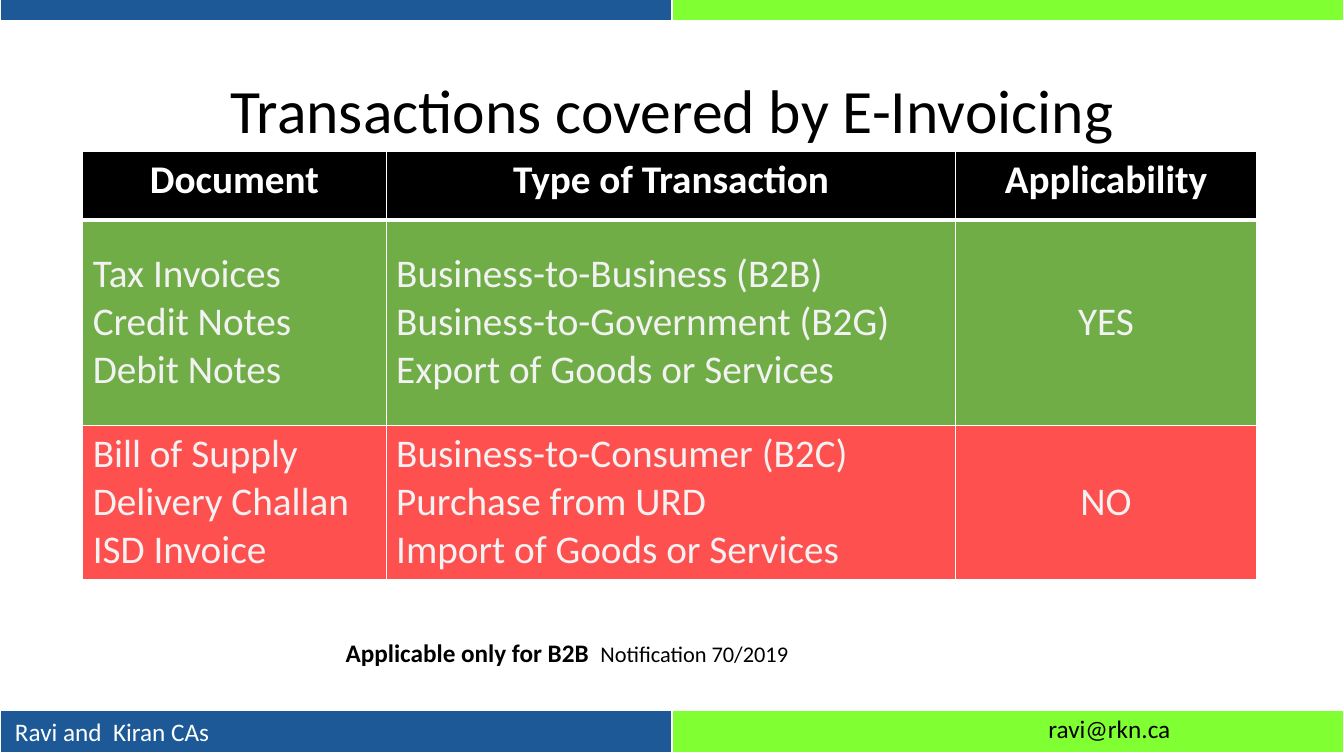
from lxml.etree import SubElement
from pptx import Presentation
from pptx.dml.color import RGBColor
from pptx.enum.text import MSO_ANCHOR as Anchor, PP_ALIGN as Align
from pptx.oxml.ns import qn
from pptx.util import Inches, Pt

FONT = "Calibri"
COLORS = {
    "white": "FFFFFF",
    "black": "000000",
    "pale": "F2F2F2",
    "blue": "1D5996",
    "lime": "80FF33",
    "green": "70AD47",
    "red": "FF5050",
}
HEADERS = ["Document", "Type of Transaction", "Applicability"]
TRANSACTION_ROWS = [
    ("green", [
        ["Tax Invoices", "Credit Notes", "Debit Notes"],
        ["Business-to-Business (B2B)", "Business-to-Government (B2G)",
         "Export of Goods or Services"],
        ["YES"],
    ]),
    ("red", [
        ["Bill of Supply", "Delivery Challan", "ISD Invoice"],
        ["Business-to-Consumer (B2C)", "Purchase from URD",
         "Import of Goods or Services"],
        ["NO"],
    ]),
]


def color(name):
    return RGBColor.from_string(COLORS[name])


def add_run(paragraph, text, size, color_name, bold=False):
    run = paragraph.add_run()
    run.text = text
    run.font.name = FONT
    run.font.size = Pt(size)
    run.font.bold = bold
    run.font.color.rgb = color(color_name)


def add_text(slide, box, runs, wrap=True):
    shape = slide.shapes.add_textbox(*map(Inches, box))
    frame = shape.text_frame
    frame.word_wrap = wrap
    paragraph = frame.paragraphs[0]
    for run in runs:
        add_run(paragraph, *run)
    return frame


def style_cell(cell, fill_name, bottom_width):
    cell.fill.solid()
    cell.fill.fore_color.rgb = color(fill_name)
    properties = cell._tc.get_or_add_tcPr()
    for index, side in enumerate("LRTB"):
        width = bottom_width if side == "B" else 1
        line = SubElement(properties, qn(f"a:ln{side}"), w=str(Pt(width)))
        fill = SubElement(line, qn("a:solidFill"))
        SubElement(fill, qn("a:srgbClr"), val=COLORS["white"])
        properties.insert(index, line)


def add_grid(slide, left, top, widths, heights):
    box = map(Inches, (left, top, sum(widths), sum(heights)))
    table = slide.shapes.add_table(len(heights), len(widths), *box).table
    table.horz_banding = False
    for column, width in zip(table.columns, widths):
        column.width = Inches(width)
    for row, height in zip(table.rows, heights):
        row.height = Inches(height)
    return table


def add_band(slide, left, top, width, height):
    table = add_grid(slide, left, top, [width / 2] * 2, [height])
    for cell, fill_name in zip(table.rows[0].cells, ("blue", "lime")):
        style_cell(cell, fill_name, 3)


def add_footer(slide, left, top, width, height):
    add_band(slide, left, top, width, height)
    add_text(slide, (left + 0.05, top + 0.01, 2.29, 0.4),
             [("Ravi and  Kiran CAs", 18, "white")], wrap=False)
    add_text(slide, (left + 10.3, top - 0.02, 1.56, 0.4),
             [("ravi@rkn.ca", 18, "black")], wrap=False)


def add_title(slide, left, top, width, height):
    frame = add_text(slide, (left, top, width, height),
                     [("Transactions covered by E-Invoicing", 44, "black")])
    frame.vertical_anchor = Anchor.MIDDLE
    frame.paragraphs[0].alignment = Align.CENTER
    frame.paragraphs[0].line_spacing = 0.9


def fill_cell(cell, lines, text_color, bold, alignment):
    frame = cell.text_frame
    for index, line in enumerate(lines):
        paragraph = frame.add_paragraph() if index else frame.paragraphs[0]
        paragraph.alignment = alignment
        add_run(paragraph, line, 28, text_color, bold)


def add_transactions(slide, left, top):
    table = add_grid(slide, left, top, [3.01, 5.65, 2.98], [0.68, 2.04, 1.53])
    for cell, header in zip(table.rows[0].cells, HEADERS):
        style_cell(cell, "black", 3)
        fill_cell(cell, [header], "white", True, Align.CENTER)
    for row_index, (fill_name, entries) in enumerate(TRANSACTION_ROWS, 1):
        for cell, lines in zip(table.rows[row_index].cells, entries):
            style_cell(cell, fill_name, 1)
            cell.vertical_anchor = Anchor.MIDDLE
            alignment = Align.CENTER if len(lines) == 1 else Align.LEFT
            fill_cell(cell, lines, "pale", False, alignment)


def add_note(slide, left, top, width, height):
    add_text(slide, (left, top, width, height), [
        ("Applicable only for B2B  ", 18, "black", True),
        ("Notification 70/2019", 16, "black"),
    ])


def main():
    presentation = Presentation()
    presentation.slide_width = Inches(13.33)
    presentation.slide_height = Inches(7.5)
    slide = presentation.slides.add_slide(presentation.slide_layouts[6])
    add_footer(slide, 0, 7.05, 13.33, 0.43)
    add_band(slide, 0, -0.21, 13.33, 0.43)
    add_title(slide, 0.92, 0.4, 11.5, 1.45)
    add_transactions(slide, 0.82, 1.5)
    add_note(slide, 3.33, 6.27, 6.67, 0.4)
    presentation.save("out.pptx")


if __name__ == "__main__":
    main()
